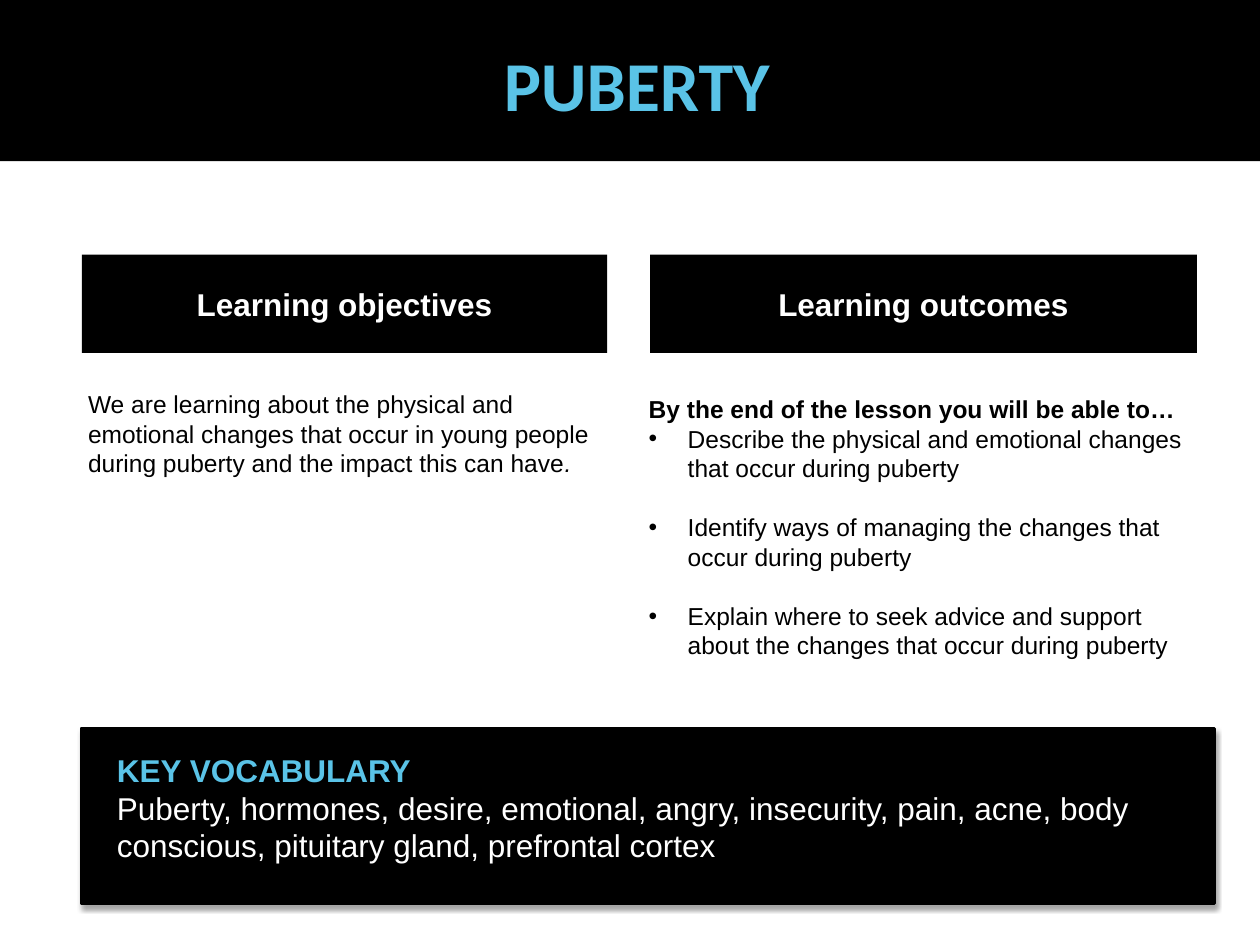
from dataclasses import dataclass

from lxml import etree
from pptx import Presentation
from pptx.dml.color import RGBColor
from pptx.enum.shapes import MSO_SHAPE
from pptx.enum.text import MSO_ANCHOR, MSO_AUTO_SIZE, PP_ALIGN
from pptx.oxml import parse_xml
from pptx.oxml.ns import nsdecls, qn
from pptx.util import Inches, Pt

RECTANGLE = MSO_SHAPE.RECTANGLE
MIDDLE, CENTER = MSO_ANCHOR.MIDDLE, PP_ALIGN.CENTER
GROW = MSO_AUTO_SIZE.SHAPE_TO_FIT_TEXT

# The grid has 100 columns and 75 rows of square cells
COLUMNS, ROWS = 100, 75
CELL = Inches(0.1)


@dataclass(frozen=True)
class Theme:
    black: RGBColor = RGBColor(0, 0, 0)
    white: RGBColor = RGBColor(255, 255, 255)
    accent: RGBColor = RGBColor(0x5A, 0xC3, 0xE7)
    title_font: str = "Calibri"
    font: str = "Arial"
    title: int = 40
    heading: int = 18
    body: int = 14


class LessonSlide:
    def __init__(self, slide, theme):
        self.slide = slide
        self.theme = theme

    def place(self, *cells):
        return [round(cell * CELL) for cell in cells]

    def style_run(self, run, size, color, bold=False, italic=False, font=None):
        run.font.name = font or self.theme.font
        run.font.size = Pt(size)
        run.font.bold = bold
        run.font.italic = italic
        run.font.color.rgb = color

    def fill_in(self, paragraph, text, size, color, **style):
        paragraph.text = text
        for run in paragraph.runs:
            self.style_run(run, size, color, **style)

    def panel(self, *cells):
        panel = self.slide.shapes.add_shape(RECTANGLE, *self.place(*cells))
        panel.shadow.inherit = False
        panel.fill.solid()
        panel.fill.fore_color.rgb = self.theme.black
        panel.line.fill.background()
        return panel

    def heading(self, text, *cells):
        frame = self.panel(*cells).text_frame
        frame.vertical_anchor = MIDDLE
        frame.paragraphs[0].alignment = CENTER
        self.fill_in(frame.paragraphs[0], text, self.theme.heading,
                     self.theme.white, bold=True)

    def raised_panel(self, *cells):
        panel = self.panel(*cells)
        panel.line.color.rgb = self.theme.black
        panel.line.width = Pt(2)
        effects = panel.element.spPr.find(qn("a:effectLst"))
        effects.append(parse_xml(
            f'<a:outerShdw {nsdecls("a")} blurRad="{Pt(3)}" dist="{Pt(1.8)}" '
            'dir="5400000" rotWithShape="0"><a:srgbClr val="000000">'
            '<a:alpha val="35000"/></a:srgbClr></a:outerShdw>'))

    def text(self, *cells, wrap=True):
        frame = self.slide.shapes.add_textbox(*self.place(*cells)).text_frame
        frame.word_wrap = wrap
        frame.auto_size = GROW
        return frame

    def bullet(self, frame, text, gap_after):
        paragraph = frame.add_paragraph()
        indent = Inches(0.31)
        properties = paragraph._p.get_or_add_pPr()
        properties.set("marL", str(indent))
        properties.set("indent", str(-indent))
        etree.SubElement(properties, qn("a:buFont")).set("typeface", "Arial")
        etree.SubElement(properties, qn("a:buChar")).set("char", "•")
        paragraph.space_after = Pt(gap_after)
        self.fill_in(paragraph, text, self.theme.body, self.theme.black)


def main():
    deck = Presentation()
    deck.slide_width, deck.slide_height = COLUMNS * CELL, ROWS * CELL
    theme = Theme()
    lesson = LessonSlide(deck.slides.add_slide(deck.slide_layouts[6]), theme)

    # Title band
    lesson.panel(0, 0, COLUMNS, 12.8)
    title = lesson.text(39, 2.8, 23.3, 7.7, wrap=False)
    lesson.fill_in(title.paragraphs[0], "PUBERTY", theme.title, theme.accent,
                   bold=True, font=theme.title_font)

    # Column headings
    for heading, left, width in (("Learning objectives", 6.5, 41.7),
                                 ("Learning outcomes", 51.6, 43.4)):
        lesson.heading(heading, left, 20.2, width, 7.8)

    # Objectives
    objective = lesson.text(6, 30.4, 42.1, 10.4).paragraphs[0]
    lesson.fill_in(objective, "We are learning about the physical and "
                   "emotional changes that occur in young people during "
                   "puberty and the impact this can have",
                   theme.body, theme.black)
    full_stop = objective.add_run()
    full_stop.text = "."
    lesson.style_run(full_stop, theme.body, theme.black, italic=True)

    # Outcomes
    outcomes = lesson.text(50.5, 30.8, 44.5, 24.6)
    lesson.fill_in(outcomes.paragraphs[0],
                   "By the end of the lesson you will be able to…",
                   theme.body, theme.black, bold=True)
    for outcome, gap_after in (
        ("Describe the physical and emotional changes that occur during "
         "puberty", 17),
        ("Identify ways of managing the changes that occur during puberty", 17),
        ("Explain where to seek advice and support about the changes that "
         "occur during puberty", 0),
    ):
        lesson.bullet(outcomes, outcome, gap_after)

    # Key vocabulary
    lesson.raised_panel(6.5, 57.8, 89.9, 13.9)
    vocabulary = lesson.text(8.3, 59.1, 84.3, 10.1)
    lesson.fill_in(vocabulary.paragraphs[0], "KEY VOCABULARY", theme.heading,
                   theme.accent, bold=True)
    lesson.fill_in(vocabulary.add_paragraph(),
                   "Puberty, hormones, desire, emotional, angry, insecurity, "
                   "pain, acne, body conscious, pituitary gland, prefrontal "
                   "cortex", theme.heading, theme.white)

    deck.save("out.pptx")


if __name__ == "__main__":
    main()
